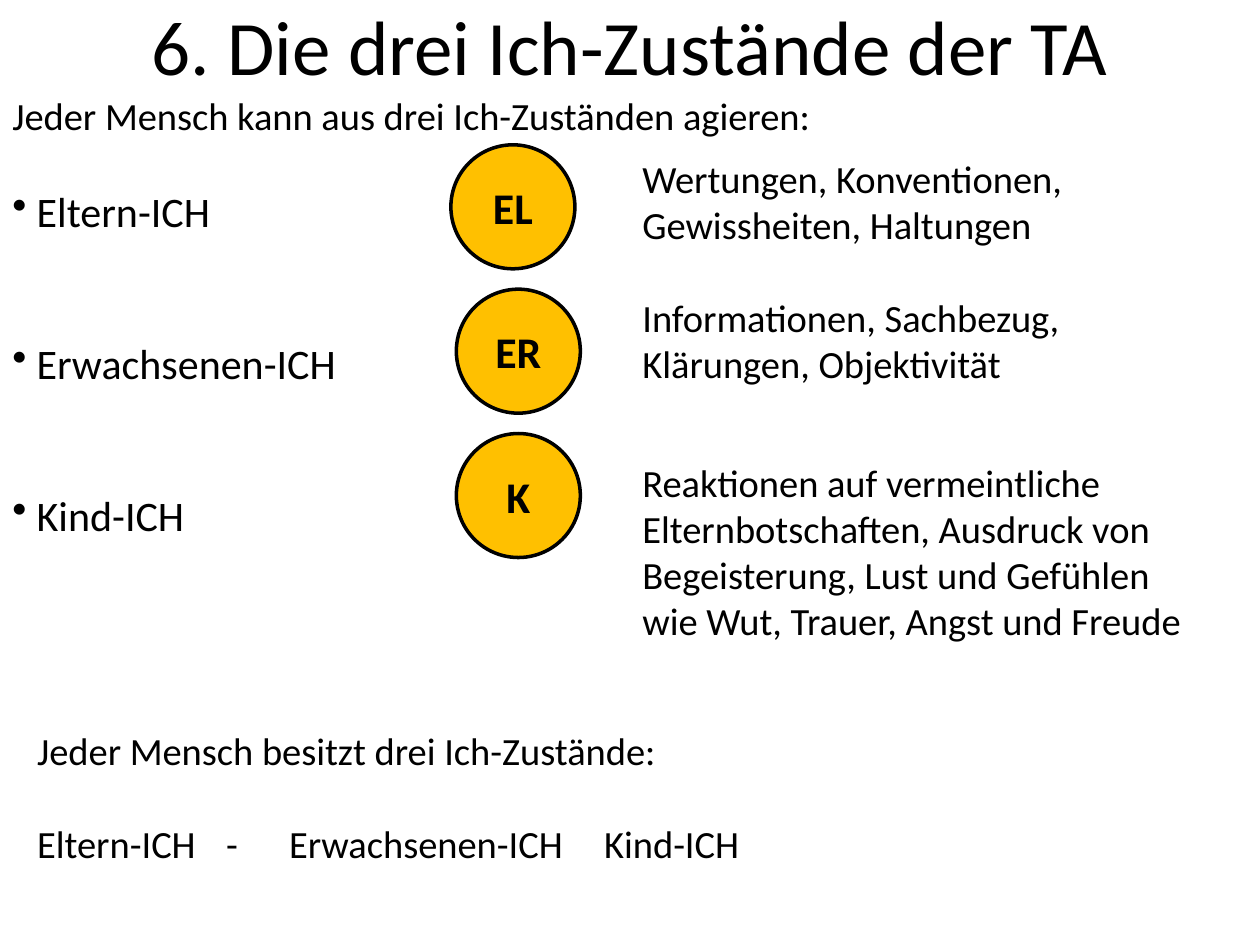
from lxml import etree
from pptx import Presentation
from pptx.dml.color import RGBColor
from pptx.enum.shapes import MSO_SHAPE
from pptx.enum.text import MSO_ANCHOR, PP_ALIGN
from pptx.oxml.ns import qn
from pptx.util import Cm, Pt

OVAL = MSO_SHAPE.OVAL
MIDDLE = MSO_ANCHOR.MIDDLE
TOP = MSO_ANCHOR.TOP
CENTER = PP_ALIGN.CENTER
LEFT = PP_ALIGN.LEFT

FONT = "Calibri"
BLACK = "000000"
AMBER = "FFC000"

TITLE = "6. Die drei Ich-Zustände der TA"
INTRO = "Jeder Mensch kann aus drei Ich-Zuständen agieren:"
STATES = [
    {"name": "Eltern-ICH", "code": "EL", "circle_left": 9.09,
     "traits": "Wertungen, Konventionen, Gewissheiten, Haltungen",
     "traits_box": (12.7, 3, 10.8, 2.13)},
    {"name": "Erwachsenen-ICH", "code": "ER", "circle_left": 9.2,
     "traits": "Informationen, Sachbezug, Klärungen, Objektivität",
     "traits_box": (12.7, 5.8, 10, 2.13)},
    {"name": "Kind-ICH", "code": "K", "circle_left": 9.2,
     "traits": "Reaktionen auf vermeintliche Elternbotschaften, Ausdruck von "
               "Begeisterung, Lust und Gefühlen wie Wut, Trauer, Angst und Freude",
     "traits_box": (12.7, 9.12, 11.8, 4.01)},
]
SUMMARY = "Jeder Mensch besitzt drei Ich-Zustände:"
SUMMARY_STATES = "Eltern-ICH\t-\tErwachsenen-ICH\tKind-ICH"

CIRCLE_TOP, CIRCLE_STEP, CIRCLE_SIZE = 2.92, 2.91, 2.5
BULLET_INDENT = 0.49


def color(value):
    return RGBColor.from_string(value)


def write(paragraph, text, size, bold=False, align=LEFT, before=0):
    paragraph.alignment = align
    paragraph.space_before = Pt(before)
    run = paragraph.add_run()
    run.text = text
    run.font.name = FONT
    run.font.size = Pt(size)
    run.font.bold = bold
    run.font.color.rgb = color(BLACK)


def add_bullet(paragraph):
    properties = paragraph._p.get_or_add_pPr()
    properties.set("marL", str(Cm(BULLET_INDENT)))
    properties.set("indent", str(-Cm(BULLET_INDENT)))
    etree.SubElement(properties, qn("a:buChar")).set("char", "•")


def add_text(slide, box, anchor=TOP):
    frame = slide.shapes.add_textbox(*map(Cm, box)).text_frame
    frame.word_wrap = True
    frame.vertical_anchor = anchor
    return frame


def add_circle(slide, left, top, code):
    circle = slide.shapes.add_shape(
        OVAL, Cm(left), Cm(top), Cm(CIRCLE_SIZE), Cm(CIRCLE_SIZE))
    circle.shadow.inherit = False
    circle.fill.solid()
    circle.fill.fore_color.rgb = color(AMBER)
    circle.line.color.rgb = color(BLACK)
    circle.line.width = Pt(2)
    circle.text_frame.vertical_anchor = MIDDLE
    write(circle.text_frame.paragraphs[0], code, 25, bold=True, align=CENTER)


def main():
    prs = Presentation()
    prs.slide_width, prs.slide_height = Cm(25.4), Cm(19.05)
    slide = prs.slides.add_slide(prs.slide_layouts[6])

    overview = add_text(slide, (0, 1.73, 24.1, 10.26))
    write(overview.paragraphs[0], INTRO, 22)
    for row, state in enumerate(STATES):
        name = overview.add_paragraph()
        write(name, state["name"], 24, before=58 if row else 27)
        add_bullet(name)
        add_circle(slide, state["circle_left"],
                   CIRCLE_TOP + row * CIRCLE_STEP, state["code"])
        traits = add_text(slide, state["traits_box"])
        write(traits.paragraphs[0], state["traits"], 22)

    summary = add_text(slide, (0.5, 14.53, 24, 3.07))
    write(summary.paragraphs[0], SUMMARY, 22)
    write(summary.add_paragraph(), SUMMARY_STATES, 22, before=27)

    title = add_text(slide, (1.27, -0.69, 22.86, 3.18), MIDDLE)
    write(title.paragraphs[0], TITLE, 44, align=CENTER)

    prs.save("out.pptx")


if __name__ == "__main__":
    main()
